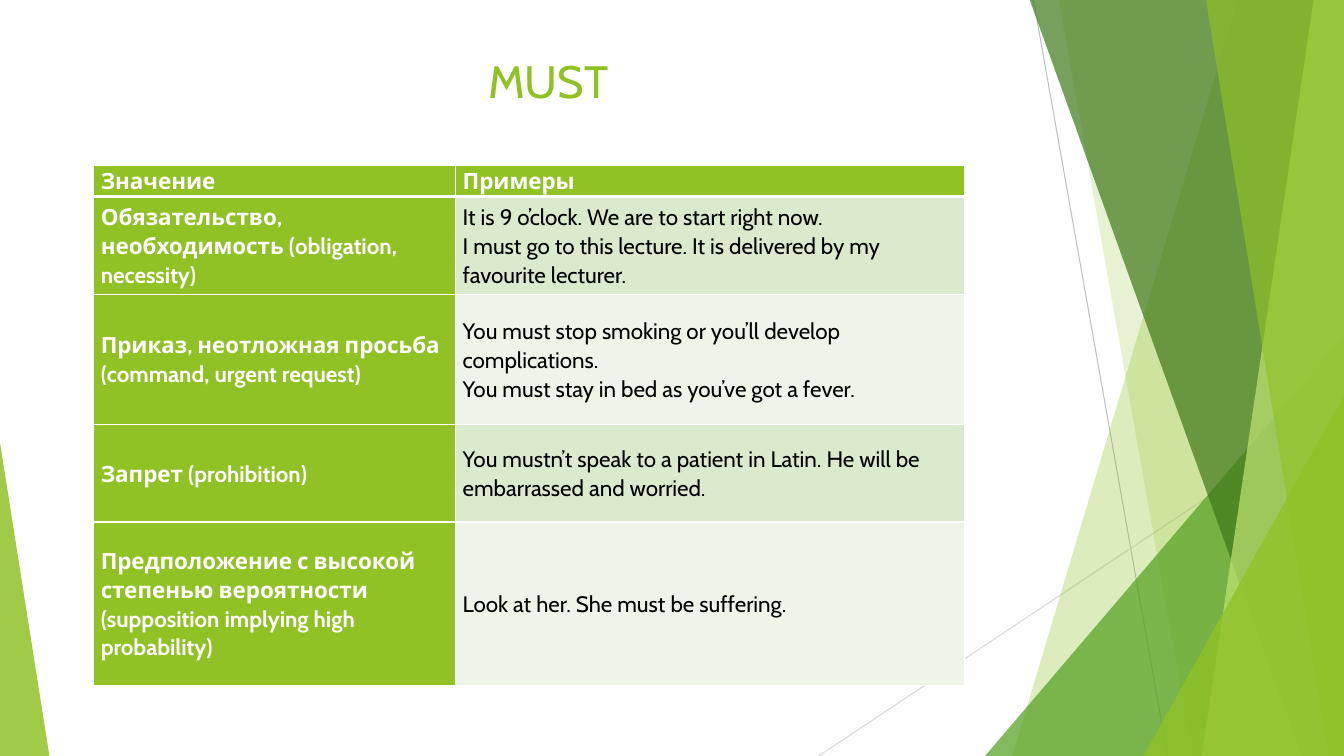
"""Build the slide on the modal verb MUST: a table of meanings over green facets."""
import pptx
import pptx.chart.data
import pptx.dml.color
import pptx.enum.shapes
import pptx.enum.text
import pptx.oxml
import pptx.oxml.ns
import pptx.util
from lxml import etree

Inches, Pt = pptx.util.Inches, pptx.util.Pt
RGBColor = pptx.dml.color.RGBColor
qn = pptx.oxml.ns.qn
TRIANGLE = pptx.enum.shapes.MSO_SHAPE.ISOSCELES_TRIANGLE
STRAIGHT = pptx.enum.shapes.MSO_CONNECTOR.STRAIGHT
MIDDLE = pptx.enum.text.MSO_ANCHOR.MIDDLE
CENTER = pptx.enum.text.PP_ALIGN.CENTER

WIDTH, HEIGHT, FACET_TOP = 13.33, 7.5, -0.01
FONT = "Cabin"
WHITE = RGBColor(0xFF, 0xFF, 0xFF)
BLACK = RGBColor(0, 0, 0)
LIME = RGBColor(0x90, 0xC2, 0x26)
GREEN = RGBColor(0x54, 0xA0, 0x21)
FOREST = RGBColor(0x3F, 0x78, 0x19)
PALE_LIME = RGBColor(0xC0, 0xE4, 0x74)
GREY = RGBColor(0xBF, 0xBF, 0xBF)
LIGHT_GREY = RGBColor(0xD9, 0xD9, 0xD9)
BANDS = (RGBColor(0xDB, 0xE9, 0xCD), RGBColor(0xEE, 0xF4, 0xE8))

TITLE = "MUST"
ROWS = [
    ("Значение", "Примеры"),
    ("Обязательство, необходимость (obligation, necessity)",
     "It is 9 o’clock. We are to start right now.\n"
     "I must go to this lecture. It is delivered by my favourite lecturer."),
    ("Приказ, неотложная просьба\n(command, urgent request)",
     "You must stop smoking or you’ll develop complications.\n"
     "You must stay in bed as you’ve got a fever."),
    ("Запрет (prohibition)",
     "You mustn’t speak to a patient in Latin. He will be\nembarrassed and worried."),
    ("Предположение с высокой\nстепенью вероятности\n"
     "(supposition implying high\nprobability)",
     "Look at her. She must be suffering."),
]
COLUMN_WIDTHS = (3.59, 5.05)
ROW_HEIGHTS = (0.31, 0.97, 1.29, 0.97, 1.62)

RAYS = [((10.25, 0), (11.58, HEIGHT), GREY), ((WIDTH, 4.03), (8.12, HEIGHT), LIGHT_GREY)]
FACETS = [
    ("band", 12.28, 10.04, LIME, 30),
    ("band", 10.5, 11.83, LIME, 20),
    ("triangle", (9.77, 3.33, 3.56), 1, GREEN, 72),
    ("band", 10.21, 12.91, FOREST, 70),
    ("band", 13.03, 11.92, PALE_LIME, 70),
    ("band", 11.96, 13.18, LIME, 65),
    ("triangle", (11.34, 3.93, 1.99), 1, LIME, 80),
    ("triangle", (0, 4.39, 0.49), 0, LIME, 85),
]


def add_ray(page, start, end, color):
    ray = page.shapes.add_connector(STRAIGHT, *map(Inches, start + end))
    ray.line.color.rgb = color
    ray.line.width = Pt(0.75)
    etree.SubElement(ray._element.spPr, qn("a:effectLst"))


def add_band(page, top_x, bottom_x):
    builder = page.shapes.build_freeform(Inches(top_x), Inches(FACET_TOP), scale=1.0)
    corners = [(WIDTH, FACET_TOP), (WIDTH, HEIGHT), (bottom_x, HEIGHT)]
    builder.add_line_segments([(Inches(x), Inches(y)) for x, y in corners], close=True)
    return builder.convert_to_shape()


def add_triangle(page, place, apex):
    left, top, width = place
    shape = page.shapes.add_shape(
        TRIANGLE, Inches(left), Inches(top), Inches(width), Inches(HEIGHT - top))
    shape.adjustments[0] = apex
    return shape


def paint(shape, color, opacity):
    shape.shadow.inherit = False
    shape.line.fill.background()
    shape.fill.solid()
    shape.fill.fore_color.rgb = color
    tint = shape._element.spPr.find(qn("a:solidFill"))[0]
    etree.SubElement(tint, qn("a:alpha"), val=str(opacity * 1000))


def write(frame, text, size, color, bold=False, align=None, spacing=None):
    frame.word_wrap = True
    para = frame.paragraphs[0]
    para.text = text.replace("\n", "\v")
    para.alignment = align
    para.line_spacing = spacing
    for span in para.runs:
        span.font.name = FONT
        span.font.size = Pt(size)
        span.font.bold = bold
        span.font.color.rgb = color
    for line_break in para._p.findall(qn("a:br")):
        etree.SubElement(line_break, qn("a:rPr"), sz=str(size * 100))


def add_borders(cell, widths):
    properties = cell._tc.get_or_add_tcPr()
    for side, width in widths.items():
        border = etree.SubElement(properties, qn("a:ln" + side), w=str(Pt(width)))
        fill = etree.SubElement(border, qn("a:solidFill"))
        etree.SubElement(fill, qn("a:srgbClr"), val=str(WHITE))


def add_meanings(page):
    table = page.shapes.add_table(
        len(ROWS), len(COLUMN_WIDTHS), Inches(0.93), Inches(1.64),
        Inches(sum(COLUMN_WIDTHS)), Inches(sum(ROW_HEIGHTS))).table
    for column, width in zip(table.columns, COLUMN_WIDTHS):
        column.width = Inches(width)
    for row, height in zip(table.rows, ROW_HEIGHTS):
        row.height = Inches(height)
    for r, texts in enumerate(ROWS):
        for c, text in enumerate(texts):
            cell = table.cell(r, c)
            heading = r == 0 or c == 0
            cell.vertical_anchor = MIDDLE
            cell.margin_left = cell.margin_right = Inches(0.07)
            cell.margin_top = cell.margin_bottom = 0
            add_borders(cell, {"L": 1, "R": 1, "T": 3 if r == 1 else 1, "B": 3 if r == 0 else 1})
            cell.fill.solid()
            cell.fill.fore_color.rgb = LIME if heading else BANDS[(r - 1) % 2]
            write(cell.text_frame, text, 16, WHITE if heading else BLACK,
                  bold=heading, spacing=1.07)


def main():
    deck = pptx.Presentation()
    deck.slide_width, deck.slide_height = Inches(WIDTH), Inches(HEIGHT)
    page = deck.slides.add_slide(deck.slide_layouts[6])
    for ray in RAYS:
        add_ray(page, *ray)
    makers = {"band": add_band, "triangle": add_triangle}
    for kind, first, second, color, opacity in FACETS:
        paint(makers[kind](page, first, second), color, opacity)
    box = page.shapes.add_textbox(Inches(0.74), Inches(0.51), Inches(9.4), Inches(0.58))
    box.text_frame.vertical_anchor = MIDDLE
    write(box.text_frame, TITLE, 32.4, LIME, align=CENTER)
    add_meanings(page)
    deck.save("out.pptx")


if __name__ == "__main__":
    main()
